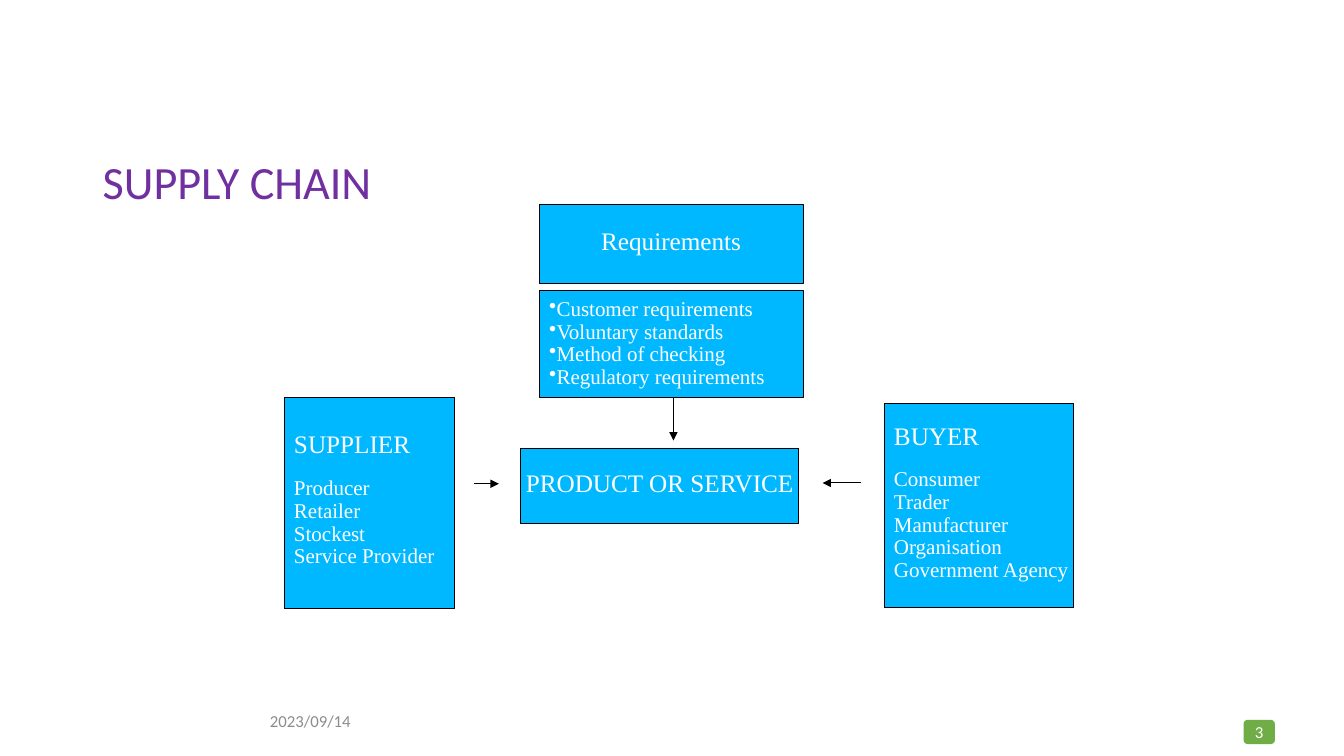
from lxml.etree import SubElement
from pptx import Presentation
from pptx.dml.color import RGBColor
from pptx.enum.shapes import MSO_CONNECTOR, MSO_SHAPE
from pptx.enum.text import MSO_ANCHOR, PP_ALIGN
from pptx.oxml.ns import qn
from pptx.util import Cm, Pt

WHITE = RGBColor(0xFF, 0xFF, 0xFF)
BLACK = RGBColor(0x00, 0x00, 0x00)
BLUE = RGBColor(0x00, 0xB8, 0xFF)
GREEN = RGBColor(0x70, 0xAD, 0x47)
PURPLE = RGBColor(0x70, 0x30, 0xA0)
GRAY = RGBColor(0x8C, 0x8C, 0x8C)


class ChainSlide:
    """Draw the elements of the supply chain slide in one style."""

    label_font = "Calibri"
    box_font = "Times New Roman"
    line_width = Pt(0.75)

    def __init__(self, deck):
        self.page = deck.slides.add_slide(deck.slide_layouts[6])

    def set_text(self, para, text, size, font, color, spacing=1.0, bullet=False):
        para.add_run().text = text
        para.line_spacing = spacing
        if bullet:
            SubElement(para._p.get_or_add_pPr(), qn("a:buChar"), char="•")
        para.font.size = Pt(size)
        para.font.name = font
        para.font.color.rgb = color

    def label(self, place, text, size, color, spacing=1.0):
        frame = self.page.shapes.add_textbox(*map(Cm, place)).text_frame
        frame.word_wrap = True
        frame.vertical_anchor = MSO_ANCHOR.MIDDLE
        self.set_text(frame.paragraphs[0], text, size, self.label_font, color, spacing)

    def shape(self, kind, place, fill):
        box = self.page.shapes.add_shape(kind, *map(Cm, place))
        box.shadow.inherit = False
        box.fill.solid()
        box.fill.fore_color.rgb = fill
        box.line.fill.background()
        box.text_frame.vertical_anchor = MSO_ANCHOR.MIDDLE
        box.text_frame.word_wrap = False
        return box

    def badge(self, place, text):
        frame = self.shape(MSO_SHAPE.ROUNDED_RECTANGLE, place, GREEN).text_frame
        frame.margin_left = frame.margin_right = 0
        frame.margin_top = frame.margin_bottom = 0
        frame.paragraphs[0].alignment = PP_ALIGN.CENTER
        self.set_text(frame.paragraphs[0], text, 12, self.label_font, WHITE)

    def box(self, place, heading="", items=(), bullet=False):
        box = self.shape(MSO_SHAPE.RECTANGLE, place, BLUE)
        box.line.color.rgb = BLACK
        box.line.width = self.line_width
        frame = box.text_frame
        rows = [(heading, 18, 0.67)] if heading else []
        rows += [(item, 15, 0.9) for item in items]
        for index, (text, size, spacing) in enumerate(rows):
            para = frame.add_paragraph() if index else frame.paragraphs[0]
            para.alignment = PP_ALIGN.LEFT if items else PP_ALIGN.CENTER
            if heading and index == 1:
                para.space_before = Pt(14)
            self.set_text(para, text, size, self.box_font, WHITE, spacing, bullet)

    def arrow(self, *ends):
        arrow = self.page.shapes.add_connector(MSO_CONNECTOR.STRAIGHT, *map(Cm, ends))
        arrow.line.color.rgb = BLACK
        arrow.line.width = self.line_width
        properties = arrow._element.spPr
        SubElement(properties.find(qn("a:ln")), qn("a:tailEnd"), type="triangle")
        SubElement(properties, qn("a:effectLst"))


def main():
    deck = Presentation()
    deck.slide_width, deck.slide_height = Cm(33.87), Cm(19.05)
    chain = ChainSlide(deck)

    chain.badge((31.34, 18.14, 0.79, 0.61), "3")
    chain.label((2.34, 3.12, 29.26, 3.05), "SUPPLY CHAIN", 33, PURPLE, 0.9)
    chain.label((6.55, 17.65, 7.62, 1.02), "2023/09/14", 12, GRAY)

    chain.box((13.59, 5.16, 6.65, 1.98), "Requirements")
    chain.box(
        (13.59, 7.32, 6.65, 2.69),
        items=("Customer requirements", "Voluntary standards",
               "Method of checking", "Regulatory requirements"),
        bullet=True,
    )
    chain.box((13.13, 11.3, 6.99, 1.9), "PRODUCT OR SERVICE")
    chain.box((7.16, 10.01, 4.29, 5.33), "SUPPLIER",
              ("Producer", "Retailer", "Stockest", "Service Provider"))
    chain.box((22.28, 10.16, 4.78, 5.16), "BUYER",
              ("Consumer", "Trader", "Manufacturer", "Organisation",
               "Government Agency"))

    chain.arrow(16.97, 10.01, 16.97, 11.1)
    chain.arrow(21.69, 12.17, 20.73, 12.17)
    chain.arrow(11.94, 12.19, 12.57, 12.19)

    deck.save("out.pptx")


if __name__ == "__main__":
    main()
